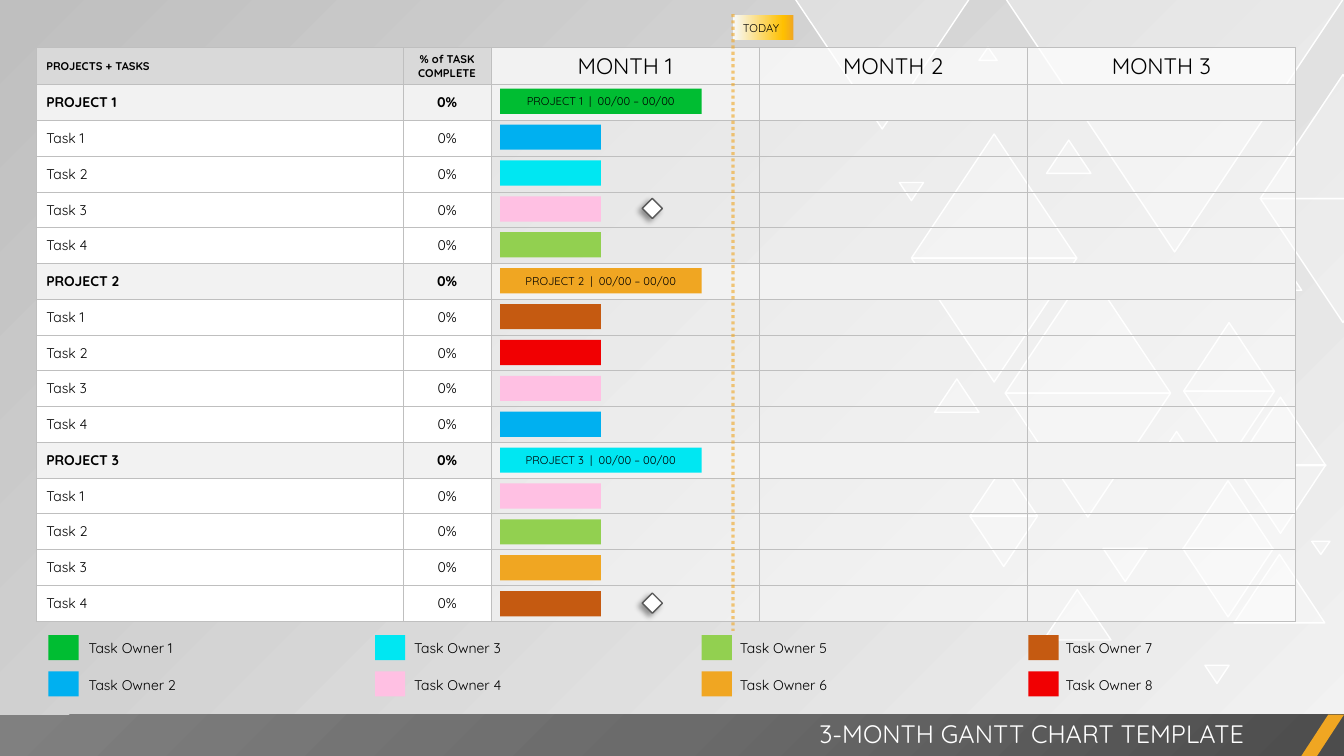
from lxml import etree
from pptx import Presentation
from pptx.dml.color import RGBColor
from pptx.enum import dml, shapes, text
from pptx.oxml import parse_xml
from pptx.oxml.ns import nsdecls, qn
from pptx.util import Inches, Pt

FONT = "Quicksand"
BLACK, WHITE, AMBER, BORDER = "000000", "FFFFFF", "F0A622", "BFBFBF"
OWNER_COLORS = ["00BD32", "00B0F0", "00E7F2", "FFC0E3", "92D050", AMBER, "C55A11", "F10002"]
# One task owner (numbered from 1) for each row below the table header
ROW_OWNERS = [1, 2, 3, 4, 5, 6, 7, 8, 4, 2, 3, 4, 5, 6, 7]
MILESTONE_ROWS = [3, 14]
# left, top, width, height, rotation
TRIANGLES = [
    (9.04, 1.33, 1.64, 1.23, 0), (9.04, 2.56, 1.64, 1.23, 180),
    (9.97, 2.67, 1.64, 1.23, 0), (9.97, 3.9, 1.64, 1.23, 180),
    (9.97, -0.02, 3.36, 2.52, 180), (12.24, 5.5, 0.9, 0.68, 0),
    (11.73, 5.44, 0.9, 0.68, 180), (11.73, 4.77, 0.9, 0.68, 0),
    (11.74, 3.2, 0.9, 0.68, 0), (11.74, 3.88, 0.9, 0.68, 180),
    (12.25, 3.94, 0.9, 0.68, 0), (12.25, 4.61, 0.9, 0.68, 180),
    (10.35, 5.85, 0.67, 0.5, 0), (9.62, 5.12, 0.67, 0.5, 180),
    (9.62, 4.62, 0.67, 0.5, 0), (12.5, 0.74, 1.64, 1.23, 0),
    (12.5, 1.97, 1.64, 1.23, 180), (10.94, 5.44, 0.44, 0.33, 180),
    (9.27, 3.76, 0.44, 0.33, 0), (11.55, 4.28, 0.24, 0.18, 0),
    (11.95, 6.6, 0.24, 0.18, 180), (8.92, 1.81, 0.24, 0.18, 180),
    (12.67, 2.7, 0.24, 0.18, 0), (9.71, 0.47, 0.18, 0.13, 0),
    (13.01, 5.37, 0.18, 0.13, 180), (10.38, 1.39, 0.44, 0.33, 0),
    (7.88, -0.02, 1.74, 1.3, 180),
]


def paint(fill, *stops, alpha=100, direction='<a:lin ang="0" scaled="0"/>'):
    """Fill with one hex colour, or with a gradient of (position, hex) stops."""
    if isinstance(stops[0], str):
        fill.solid()
        fill.fore_color.rgb = RGBColor.from_string(stops[0])
        if alpha < 100:
            color = fill._xPr.find(f"{qn('a:solidFill')}/{qn('a:srgbClr')}")
            etree.SubElement(color, qn("a:alpha"), val=str(alpha * 1000))
        return
    fill.gradient()
    gradient = fill._xPr.find(qn("a:gradFill"))
    for child in list(gradient):
        gradient.remove(child)
    stop_list = etree.SubElement(gradient, qn("a:gsLst"))
    for position, color in stops:
        stop = etree.SubElement(stop_list, qn("a:gs"), pos=str(position * 1000))
        etree.SubElement(stop, qn("a:srgbClr"), val=color)
    gradient.append(parse_xml(direction.replace(" ", f" {nsdecls('a')} ", 1)))


def write(frame, words, size, color=BLACK, bold=False, align=text.PP_ALIGN.LEFT):
    frame.text = words
    paragraph = frame.paragraphs[0]
    paragraph.alignment = align
    paragraph.font.name = FONT
    paragraph.font.size = Pt(size)
    paragraph.font.bold = bold
    paint(paragraph.font.fill, color)


prs = Presentation()
prs.slide_width, prs.slide_height = Inches(13.33), Inches(7.5)
slide = prs.slides.add_slide(prs.slide_layouts[5])
paint(slide.background.fill, (0, "F2F2F2"), (100, "BFBFBF"),
      direction='<a:lin ang="13500000" scaled="0"/>')

# Backdrop triangles
backdrop = slide.shapes.add_group_shape()
for left, top, width, height, rotation in TRIANGLES:
    triangle = backdrop.shapes.add_shape(
        shapes.MSO_SHAPE.ISOSCELES_TRIANGLE,
        Inches(left), Inches(top), Inches(width), Inches(height))
    triangle.rotation = rotation
    triangle.shadow.inherit = False
    paint(triangle.fill, WHITE, alpha=30)
    paint(triangle.line.fill, WHITE)
    triangle.line.width = Pt(1)

# Footer band with the title
footer = slide.shapes.add_shape(
    shapes.MSO_SHAPE.RECTANGLE, 0, Inches(7.09), Inches(13.33), Inches(0.42))
paint(footer.fill, (0, "4C4C4C"), (50, "6B6B6B"), (100, "808080"),
      direction='<a:path path="circle"><a:fillToRect l="100000" t="100000"/></a:path>')
stripe = slide.shapes.add_shape(
    shapes.MSO_SHAPE.PARALLELOGRAM, Inches(12.9), Inches(7.09), Inches(0.43), Inches(0.42))
stripe.adjustments[0] = 0.652
paint(stripe.fill, AMBER)
for part in (footer, stripe):
    part.shadow.inherit = False
    part.line.fill.background()

title = slide.shapes.title
title.left, title.top, title.width, title.height = (
    Inches(5.25), Inches(7.08), Inches(7.19), Inches(0.4))
title.text_frame.vertical_anchor = text.MSO_ANCHOR.TOP
title.text_frame.auto_size = text.MSO_AUTO_SIZE.SHAPE_TO_FIT_TEXT
write(title.text_frame, "3-MONTH GANTT CHART TEMPLATE", 18, WHITE, align=text.PP_ALIGN.RIGHT)
stripe.element.addnext(title.element)

# Schedule table
rows = [["PROJECTS + TASKS", "% of TASK COMPLETE", "MONTH 1", "MONTH 2", "MONTH 3"]]
for project in range(1, 4):
    for name in [f"PROJECT {project}"] + [f"Task {task}" for task in range(1, 5)]:
        rows.append([name, "0%", "", "", ""])

schedule = slide.shapes.add_table(
    len(rows), 5, Inches(0.36), Inches(0.47), Inches(12.49), Inches(5.7)).table
schedule.first_row = schedule.horz_banding = False
for column, width in zip(schedule.columns, [3.64, 0.87, 2.66, 2.66, 2.66]):
    column.width = Inches(width)
for r, row in enumerate(rows):
    schedule.rows[r].height = Inches(0.355 if r else 0.37)
    is_project = r % 5 == 1
    for c, words in enumerate(row):
        is_month = c > 1
        cell = schedule.cell(r, c)
        cell.vertical_anchor = text.MSO_ANCHOR.MIDDLE
        cell.margin_top = cell.margin_bottom = Inches(0.02)
        for side in ("lnL", "lnR", "lnT", "lnB"):
            edge = etree.SubElement(cell._tc.get_or_add_tcPr(), qn(f"a:{side}"), w="6350")
            solid = etree.SubElement(edge, qn("a:solidFill"))
            etree.SubElement(solid, qn("a:srgbClr"), val=BORDER)
        if r == 0:
            size, bold = (16, False) if is_month else (8, True)
            color, alpha = (WHITE, 75) if is_month else ("D9D9D9", 100)
        else:
            size, bold = 10, is_project
            color = "F2F2F2" if is_project else WHITE
            alpha = 50 if is_month and not is_project else 100
        paint(cell.fill, color, alpha=alpha)
        write(cell.text_frame, words, size, bold=bold,
              align=text.PP_ALIGN.CENTER if c else text.PP_ALIGN.LEFT)

# Bars and milestones
for i, owner in enumerate(ROW_OWNERS):
    is_project = i % 5 == 0
    top = 0.88 + 0.356 * i
    bar = slide.shapes.add_shape(
        shapes.MSO_SHAPE.RECTANGLE, Inches(4.96), Inches(top),
        Inches(2 if is_project else 1), Inches(0.25))
    bar.shadow.inherit = False
    bar.line.fill.background()
    paint(bar.fill, OWNER_COLORS[owner - 1])
    if is_project:
        write(bar.text_frame, f"PROJECT {i // 5 + 1}\u00a0 |\u00a0 00/00 – 00/00".replace("\u00a0", " "),
              8, align=text.PP_ALIGN.CENTER)
    if i in MILESTONE_ROWS:
        milestone = slide.shapes.add_shape(
            shapes.MSO_SHAPE.DIAMOND, Inches(6.37), Inches(top + 0.02), Inches(0.2), Inches(0.2))
        paint(milestone.fill, WHITE)
        paint(milestone.line.fill, "595959")
        milestone.line.width = Pt(1)
        milestone.shadow.inherit = False
        shadow = etree.SubElement(
            milestone.element.spPr.find(qn("a:effectLst")), qn("a:outerShdw"),
            blurRad=str(Pt(4)), dist=str(Pt(3)), dir="8100000", algn="ctr", rotWithShape="0")
        shade = etree.SubElement(shadow, qn("a:srgbClr"), val=BLACK)
        etree.SubElement(shade, qn("a:alpha"), val="40000")

# Legend
for i, color in enumerate(OWNER_COLORS):
    column, line = divmod(i, 2)
    top = Inches(6.3 + 0.36 * line)
    swatch = slide.shapes.add_shape(
        shapes.MSO_SHAPE.RECTANGLE, Inches(0.48 + 3.24 * column), top, Inches(0.3), Inches(0.25))
    swatch.shadow.inherit = False
    swatch.line.fill.background()
    paint(swatch.fill, color)
    label = slide.shapes.add_textbox(
        Inches(0.78 + 3.23 * column), top, Inches(2.4), Inches(0.27)).text_frame
    label.word_wrap = True
    label.auto_size = text.MSO_AUTO_SIZE.SHAPE_TO_FIT_TEXT
    write(label, f"Task Owner {i + 1}", 10)

# Today marker
today = slide.shapes.add_group_shape()
flag = today.shapes.add_shape(
    shapes.MSO_SHAPE.RECTANGLE, Inches(7.27), Inches(0.15), Inches(0.6), Inches(0.25))
flag.shadow.inherit = False
flag.line.fill.background()
paint(flag.fill, (0, "F7FAFD"), (83, "FFC000"), (100, AMBER))
write(flag.text_frame, "TODAY", 8)
today_line = today.shapes.add_connector(
    shapes.MSO_CONNECTOR.STRAIGHT, Inches(7.27), Inches(0.14), Inches(7.27), Inches(6.26))
paint(today_line.line.fill, AMBER, alpha=60)
today_line.line.width = Pt(2.25)
today_line.line.dash_style = dml.MSO_LINE.ROUND_DOT
etree.SubElement(today_line.element.spPr, qn("a:effectLst"))

prs.save("out.pptx")
